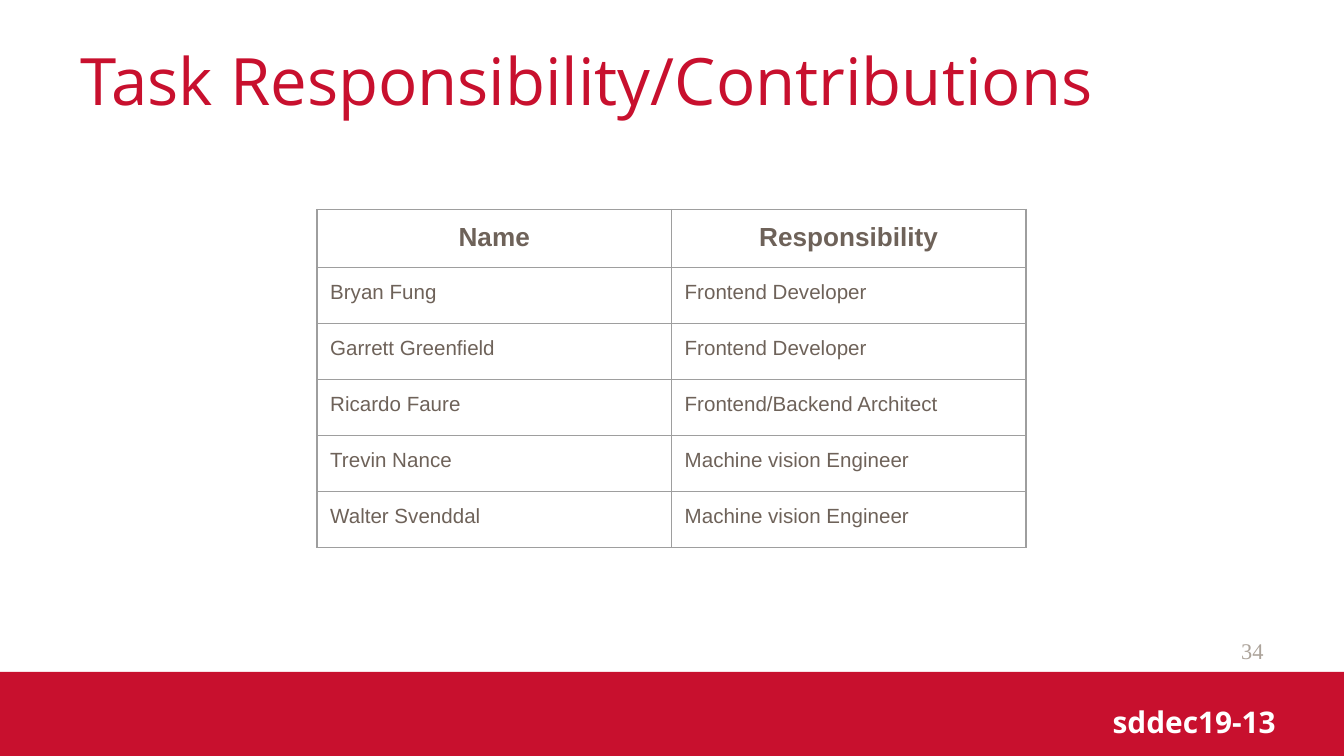
from lxml.etree import SubElement
from pptx import Presentation
from pptx.dml.color import RGBColor
from pptx.enum.shapes import MSO_SHAPE
from pptx.enum.text import MSO_ANCHOR, PP_ALIGN
from pptx.oxml.ns import qn
from pptx.util import Cm, Pt

RED, WHITE, BROWN, TAUPE, GREY = "C8102E", "FFFFFF", "6E6259", "ACA39A", "9E9E9E"
PAGE_WIDTH, PAGE_HEIGHT = 25.4, 14.29
BAND_TOP = 12.7
TABLE_LEFT, TABLE_TOP = 5.99, 3.96
COLUMN_WIDTH, ROW_HEIGHT = 6.7, 1.06
CELL_MARGIN = 0.25

TEXTS = [
    ("Task Responsibility/Contributions", (1.27, 0.3, 21.59, 2.39),
     MSO_ANCHOR.MIDDLE, PP_ALIGN.LEFT,
     {"name": "Open Sans", "size": Pt(35), "bold": False}, RED),
    ("34", (18.21, 11.91, 5.92, 0.76), MSO_ANCHOR.MIDDLE, PP_ALIGN.RIGHT,
     {"name": "Times New Roman", "size": Pt(12), "bold": False}, TAUPE),
    ("sddec19-13", (17.58, 13.18, 6.78, 0.79), MSO_ANCHOR.TOP, PP_ALIGN.RIGHT,
     {"name": "Open Sans", "size": Pt(16), "bold": True}, WHITE),
]
ROWS = [
    ("Name", "Responsibility"),
    ("Bryan Fung", "Frontend Developer"),
    ("Garrett Greenfield", "Frontend Developer"),
    ("Ricardo Faure", "Frontend/Backend Architect"),
    ("Trevin Nance", "Machine vision Engineer"),
    ("Walter Svenddal", "Machine vision Engineer"),
]
HEADER_FONT = {"name": "Arial", "size": Pt(14), "bold": True}
BODY_FONT = {"name": "Arial", "size": Pt(11), "bold": False}


def color(value):
    return RGBColor.from_string(value)


def write(frame, text, alignment, font, font_color):
    para = frame.paragraphs[0]
    para.alignment = alignment
    span = para.add_run()
    span.text = text
    for key, value in font.items():
        setattr(span.font, key, value)
    span.font.color.rgb = color(font_color)


def add_band(page):
    band = page.shapes.add_shape(MSO_SHAPE.RECTANGLE, 0, Cm(BAND_TOP),
                                 Cm(PAGE_WIDTH), Cm(PAGE_HEIGHT - BAND_TOP))
    band.shadow.inherit = False
    band.fill.solid()
    band.fill.fore_color.rgb = color(RED)
    band.line.fill.background()


def add_text(page, text, place, anchor, alignment, font, font_color):
    box = page.shapes.add_textbox(*map(Cm, place))
    box.text_frame.word_wrap = True
    box.text_frame.vertical_anchor = anchor
    write(box.text_frame, text, alignment, font, font_color)


def add_borders(cell):
    properties = cell._tc.get_or_add_tcPr()
    for position, side in enumerate(("lnL", "lnR", "lnT", "lnB")):
        line = SubElement(properties, qn(f"a:{side}"), w=str(Pt(0.75)))
        fill = SubElement(line, qn("a:solidFill"))
        SubElement(fill, qn("a:srgbClr"), val=GREY)
        properties.insert(position, line)


def add_responsibilities(page):
    columns = len(ROWS[0])
    table = page.shapes.add_table(
        len(ROWS), columns, Cm(TABLE_LEFT), Cm(TABLE_TOP),
        Cm(COLUMN_WIDTH * columns), Cm(ROW_HEIGHT * len(ROWS))).table
    table.first_row = table.horz_banding = False
    for column in table.columns:
        column.width = Cm(COLUMN_WIDTH)
    for index, texts in enumerate(ROWS):
        table.rows[index].height = Cm(ROW_HEIGHT)
        alignment = PP_ALIGN.LEFT if index else PP_ALIGN.CENTER
        font = BODY_FONT if index else HEADER_FONT
        for column, text in enumerate(texts):
            cell = table.cell(index, column)
            for side in ("left", "right", "top", "bottom"):
                setattr(cell, f"margin_{side}", Cm(CELL_MARGIN))
            cell.fill.background()
            add_borders(cell)
            write(cell.text_frame, text, alignment, font, BROWN)


def main():
    deck = Presentation()
    deck.slide_width, deck.slide_height = Cm(PAGE_WIDTH), Cm(PAGE_HEIGHT)
    page = deck.slides.add_slide(deck.slide_layouts[6])
    add_band(page)
    for entry in TEXTS:
        add_text(page, *entry)
    add_responsibilities(page)
    deck.save("out.pptx")


if __name__ == "__main__":
    main()
